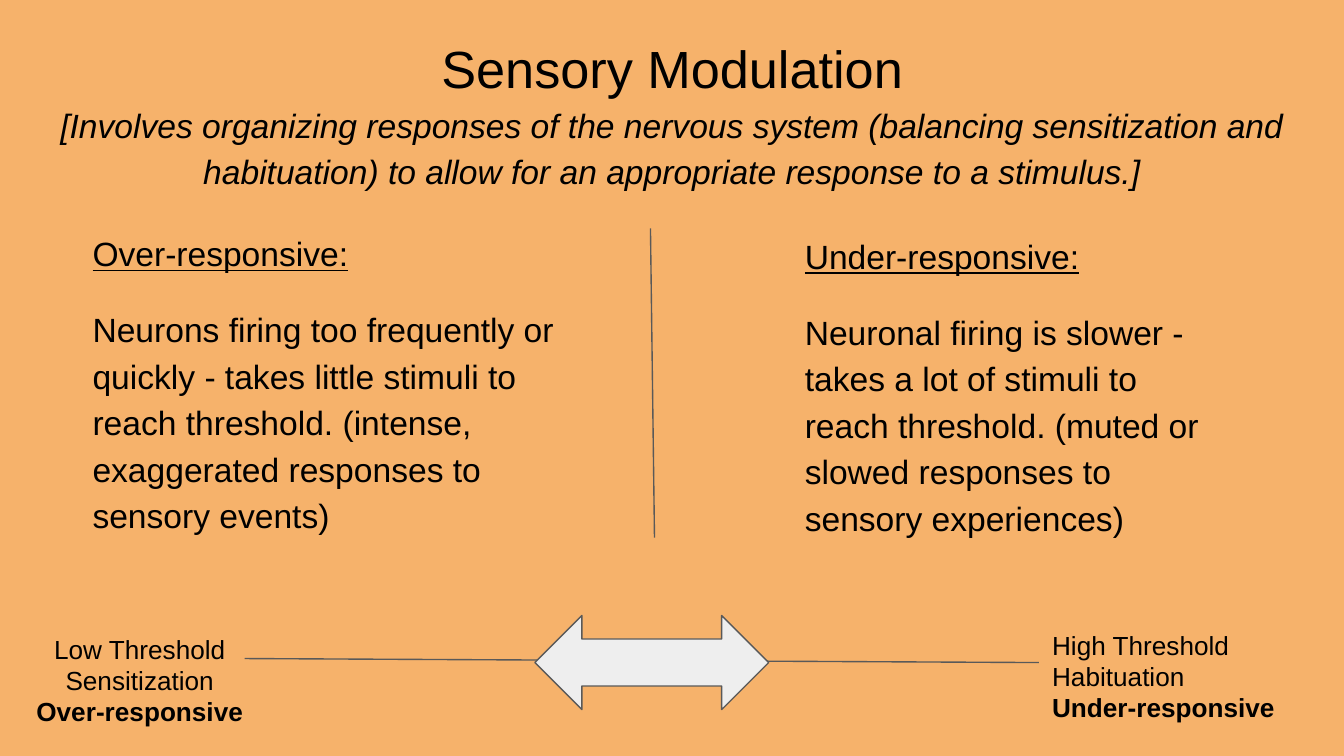
from dataclasses import dataclass

from lxml.etree import SubElement
from pptx import Presentation
from pptx.dml.color import RGBColor as Rgb
from pptx.enum.shapes import MSO_CONNECTOR as Conn, MSO_SHAPE as Form
from pptx.enum.text import MSO_ANCHOR as Anchor, PP_ALIGN as Align
from pptx.oxml.ns import qn
from pptx.util import Inches, Pt


@dataclass(frozen=True)
class Theme:
    font: str = "Arial"
    back: Rgb = Rgb(0xF6, 0xB2, 0x6B)
    ink: Rgb = Rgb(0, 0, 0)
    rule: Rgb = Rgb(0x59, 0x59, 0x59)
    pale: Rgb = Rgb(0xEE, 0xEE, 0xEE)
    title: int = 28
    body: int = 18
    label: int = 14
    gap: int = 16
    weight: float = 0.75


@dataclass(frozen=True)
class Para:
    text: str
    size: int
    bold: bool = False
    italic: bool = False
    under: bool = False
    lead: float = 1.0
    before: int = 0
    after: int = 0


@dataclass(frozen=True)
class Block:
    left: float
    top: float
    width: float
    height: float
    paras: tuple[Para, ...]
    align: Align = Align.LEFT


@dataclass(frozen=True)
class Rule:
    x1: float
    y1: float
    x2: float
    y2: float


T = Theme()


def column(head: str, text: str) -> tuple[Para, ...]:
    return (Para(head, T.body, under=True, lead=1.15),
            Para(text, T.body, lead=1.15, before=T.gap))


def label(level: str, process: str, kind: str) -> tuple[Para, ...]:
    return (Para(level, T.label), Para(process, T.label),
            Para(kind, T.label, bold=True))


def add_text(slide, block: Block) -> None:
    box = slide.shapes.add_textbox(Inches(block.left), Inches(block.top),
                                   Inches(block.width), Inches(block.height))
    frame = box.text_frame
    frame.word_wrap = True
    frame.vertical_anchor = Anchor.TOP
    frame.margin_left = frame.margin_right = Inches(0.1)
    frame.margin_top = frame.margin_bottom = Inches(0.1)
    for i, para in enumerate(block.paras):
        line = frame.add_paragraph() if i else frame.paragraphs[0]
        line.alignment = block.align
        line.line_spacing = para.lead
        line.space_before = Pt(para.before)
        line.space_after = Pt(para.after)
        run = line.add_run()
        run.text = para.text
        font = run.font
        font.name, font.size = T.font, Pt(para.size)
        font.bold, font.italic = para.bold, para.italic
        font.underline = para.under
        font.color.rgb = T.ink


def add_rule(slide, rule: Rule) -> None:
    line = slide.shapes.add_connector(
        Conn.STRAIGHT, Inches(rule.x1), Inches(rule.y1),
        Inches(rule.x2), Inches(rule.y2))
    line.line.color.rgb = T.rule
    line.line.width = Pt(T.weight)
    SubElement(line._element.spPr, qn("a:effectLst"))


def add_arrow(slide, left: float, top: float, width: float, height: float) -> None:
    arrow = slide.shapes.add_shape(Form.LEFT_RIGHT_ARROW, Inches(left),
                                   Inches(top), Inches(width), Inches(height))
    arrow.shadow.inherit = False
    arrow.fill.solid()
    arrow.fill.fore_color.rgb = T.pale
    arrow.line.color.rgb = T.rule
    arrow.line.width = Pt(T.weight)


HEAD = Block(0.34, 0.17, 9.32, 0.63, (
    Para("Sensory Modulation", T.title),
    Para("[Involves organizing responses of the nervous system (balancing "
         "sensitization and habituation) to allow for an appropriate response "
         "to a stimulus.]", T.body, italic=True, lead=1.15, after=T.gap),
), Align.CENTER)

COLUMNS = (
    Block(0.59, 1.59, 3.65, 2.62, column(
        "Over-responsive:",
        "Neurons firing too frequently or quickly - takes little stimuli to "
        "reach threshold. (intense, exaggerated responses to sensory events)")),
    Block(5.89, 1.61, 3.36, 3.11, column(
        "Under-responsive:",
        "Neuronal firing is slower - takes a lot of stimuli to reach threshold. "
        "(muted or slowed responses to sensory experiences)")),
)

LABELS = (
    Block(0.1, 4.61, 1.88, 0.91, label(
        "Low Threshold", "Sensitization", "Over-responsive"), Align.CENTER),
    Block(7.73, 4.58, 2.34, 0.7, label(
        "High Threshold", "Habituation", "Under-responsive")),
)

SCALE = Rule(1.82, 4.9, 7.73, 4.93)
DIVIDER = Rule(4.84, 1.7, 4.87, 4)


def main() -> None:
    deck = Presentation()
    # A 16:9 page
    deck.slide_width = Inches(10)
    deck.slide_height = Inches(10 * 9 / 16)
    slide = deck.slides.add_slide(deck.slide_layouts[6])
    slide.background.fill.solid()
    slide.background.fill.fore_color.rgb = T.back

    # Title and the left column
    for block in (HEAD, COLUMNS[0]):
        add_text(slide, block)

    # Threshold scale, with the arrow over its line
    add_rule(slide, SCALE)
    add_arrow(slide, 3.98, 4.58, 1.74, 0.7)
    for block in LABELS:
        add_text(slide, block)

    # Right column and the divider
    add_text(slide, COLUMNS[1])
    add_rule(slide, DIVIDER)

    deck.save("out.pptx")


if __name__ == "__main__":
    main()
